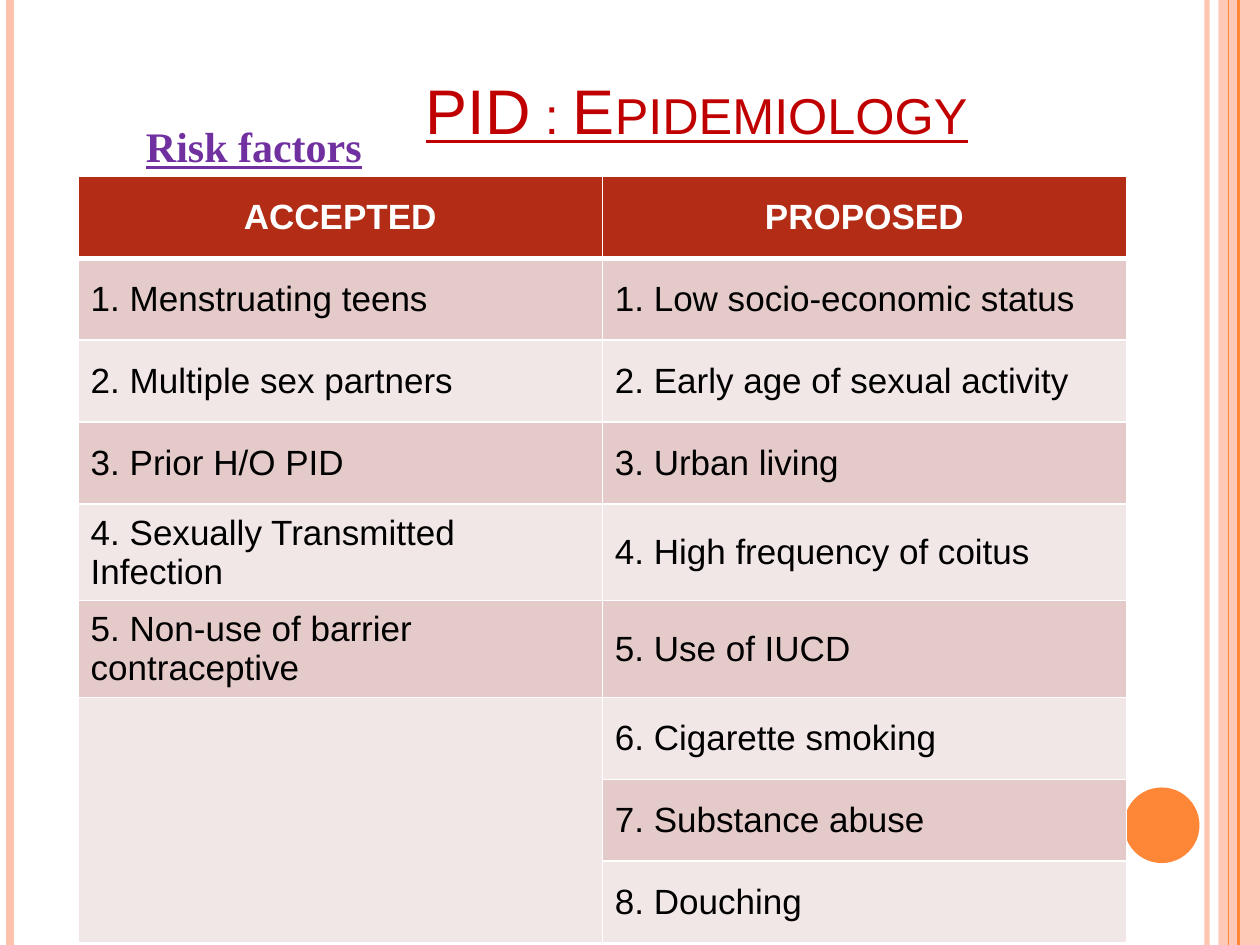
import pptx
import pptx.util
import pptx.dml.color
import pptx.enum.shapes
import pptx.enum.text
import pptx.oxml
import pptx.oxml.ns
from lxml import etree

Inches, Pt = pptx.util.Inches, pptx.util.Pt
RGBColor = pptx.dml.color.RGBColor
MSO_SHAPE = pptx.enum.shapes.MSO_SHAPE
PP_ALIGN = pptx.enum.text.PP_ALIGN
MSO_ANCHOR = pptx.enum.text.MSO_ANCHOR
qn = pptx.oxml.ns.qn

WHITE = RGBColor(0xFF, 0xFF, 0xFF)
BLACK = RGBColor(0, 0, 0)
PEACH = RGBColor(0xFE, 0xC2, 0xAC)
ORANGE = RGBColor(0xFE, 0x86, 0x37)
RED = RGBColor(0xC0, 0, 0)
PURPLE = RGBColor(0x70, 0x30, 0xA0)
HEADER = RGBColor(0xB3, 0x2C, 0x16)
BANDS = [RGBColor(0xE4, 0xCB, 0xCA), RGBColor(0xF2, 0xE7, 0xE7)]


def set_alpha(sp, percent):
    color = next(sp._element.spPr.iter(qn("a:srgbClr")))
    etree.SubElement(color, qn("a:alpha")).set("val", str(percent * 1000))


def add_run(p, text, size, font, color, bold=False, underline=False):
    r = p.add_run()
    r.text = text
    r.font.size = Pt(size)
    r.font.name = font
    r.font.color.rgb = color
    r.font.bold = bold
    r.font.underline = underline
    return r


prs = pptx.Presentation()
prs.slide_width, prs.slide_height = Inches(10), Inches(7.5)
s = prs.slides.add_slide(prs.slide_layouts[6])

# Side band and circle
for shape, box, color, alpha in [
    (MSO_SHAPE.RECTANGLE, (9.67, 0, 0.33, 7.5), PEACH, 87),
    (MSO_SHAPE.OVAL, (8.92, 6.25, 0.6, 0.6), ORANGE, 100),
]:
    sp = s.shapes.add_shape(shape, *map(Inches, box))
    sp.shadow.inherit = False
    sp.fill.solid()
    sp.fill.fore_color.rgb = color
    sp.line.fill.background()
    if alpha < 100:
        set_alpha(sp, alpha)

# Vertical rules
for x, color, width, alpha in [
    (9.58, PEACH, 3, 93),
    (0.08, PEACH, 4.5, 100),
    (9.83, ORANGE, 1.5, 100),
    (9.75, ORANGE, 0.75, 100),
]:
    line = s.shapes.add_connector(
        pptx.enum.shapes.MSO_CONNECTOR.STRAIGHT,
        Inches(x), Inches(0), Inches(x), Inches(7.5))
    line.line.color.rgb = color
    line.line.width = Pt(width)
    if alpha < 100:
        set_alpha(line, alpha)
    etree.SubElement(line._element.spPr, qn("a:effectLst"))

# Title
tf = s.shapes.add_textbox(Inches(1.1), Inches(-0.03), Inches(8.86), Inches(1.25)).text_frame
tf.word_wrap = True
tf.vertical_anchor = MSO_ANCHOR.BOTTOM
p = tf.paragraphs[0]
p.alignment = PP_ALIGN.CENTER
r = add_run(p, "PID : Epidemiology", 36, "Arial", RED, underline=True)
r.font._element.set("cap", "small")

# Subheading
tf = s.shapes.add_textbox(Inches(0.98), Inches(0.91), Inches(8.98), Inches(6.59)).text_frame
tf.word_wrap = True
p = tf.paragraphs[0]
p.alignment = PP_ALIGN.JUSTIFY
pPr = p._p.get_or_add_pPr()
pPr.set("marL", str(Inches(0.09)))
pPr.set("indent", str(Inches(-0.01)))
add_run(p, "Risk factors", 24, "Times New Roman", PURPLE, bold=True, underline=True)

# Risk factor table
rows = [
    ("ACCEPTED", "PROPOSED"),
    ("1. Menstruating teens", "1. Low socio-economic status"),
    ("2. Multiple sex partners", "2. Early age of sexual activity"),
    ("3. Prior H/O PID", "3. Urban living"),
    ("4. Sexually Transmitted Infection", "4. High frequency of coitus"),
    ("5. Non-use of barrier contraceptive", "5. Use of IUCD"),
    ("", "6. Cigarette smoking"),
    ("", "7. Substance abuse"),
    ("", "8. Douching"),
]
table = s.shapes.add_table(
    len(rows), 2, Inches(0.62), Inches(1.4), Inches(8.32), Inches(0.65 * len(rows))).table
for i, row in enumerate(rows):
    table.rows[i].height = Inches(0.65)
    for j, text in enumerate(row):
        cell = table.cell(i, j)
        cell.vertical_anchor = MSO_ANCHOR.MIDDLE
        if text:
            p = cell.text_frame.paragraphs[0]
            p.alignment = PP_ALIGN.LEFT if i else PP_ALIGN.CENTER
            add_run(p, text, 20, "Arial", BLACK if i else WHITE, bold=i == 0)
        # Borders come before the fill in the cell properties
        tcPr = cell._tc.get_or_add_tcPr()
        for side in ("L", "R", "T", "B"):
            thick = (i == 0 and side == "B") or (i == 1 and side == "T")
            ln = etree.SubElement(tcPr, qn("a:ln" + side))
            ln.set("w", str(Pt(3 if thick else 1)))
            fill = etree.SubElement(ln, qn("a:solidFill"))
            etree.SubElement(fill, qn("a:srgbClr")).set("val", str(WHITE))
        cell.fill.solid()
        cell.fill.fore_color.rgb = BANDS[(i - 1) % 2] if i else HEADER
table.cell(6, 0).merge(table.cell(8, 0))

prs.save("out.pptx")
